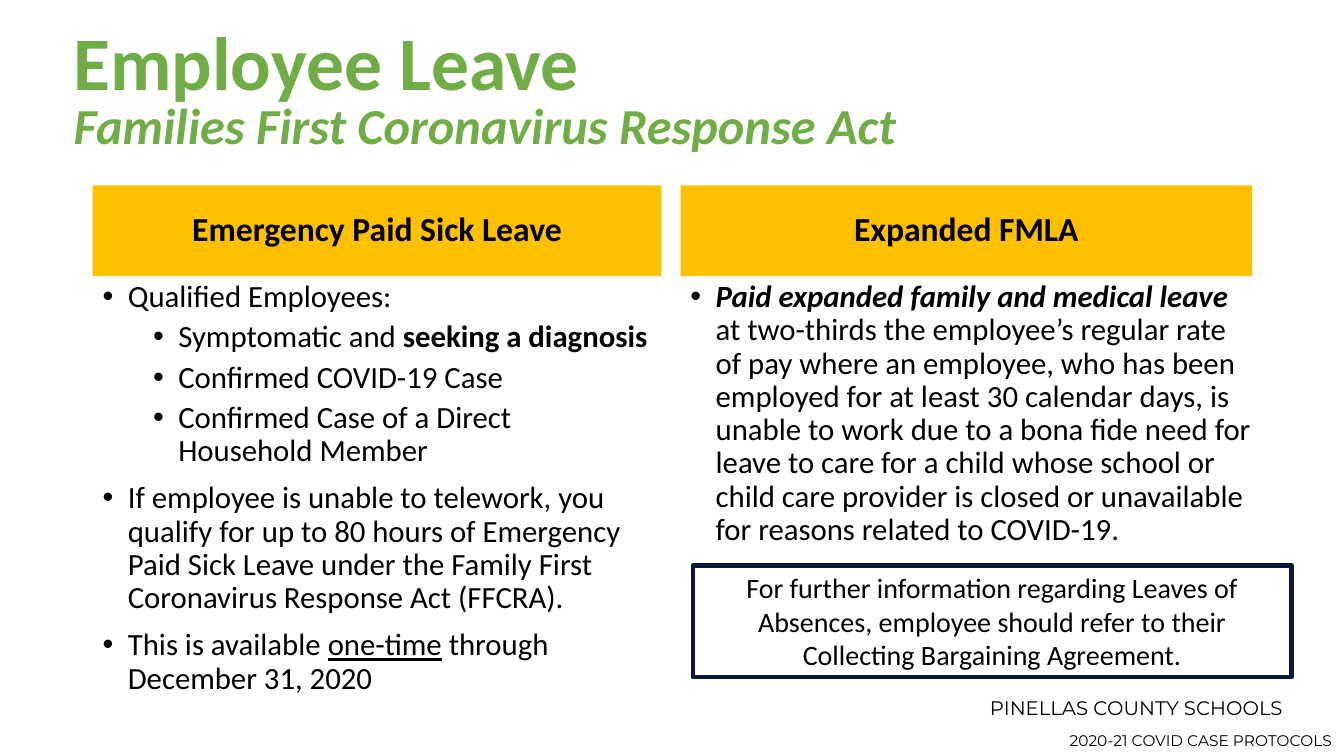
from lxml import etree
from pptx import Presentation
from pptx.dml.color import RGBColor
from pptx.enum.shapes import MSO_SHAPE
from pptx.enum.text import MSO_ANCHOR, MSO_AUTO_SIZE, PP_ALIGN
from pptx.oxml.ns import qn
from pptx.util import Inches, Pt

COLORS = {"gold": "FFC000", "green": "70AD47", "navy": "0B163C", "text": "000000"}

# Each bullet: (level, [(text, styles)]), styles being any of b, i, u
SICK_LEAVE = [
    (0, [("Qualified Employees:", "")]),
    (1, [("Symptomatic and ", ""), ("seeking a diagnosis", "b")]),
    (1, [("Confirmed COVID-19 Case", "")]),
    (1, [("Confirmed Case of a Direct Household Member", "")]),
    (0, [("If employee is unable to telework, you qualify for up to 80 hours of "
          "Emergency Paid Sick Leave under the Family First Coronavirus "
          "Response Act (FFCRA).", "")]),
    (0, [("This is available ", ""), ("one-time", "u"),
         (" through December 31, 2020", "")]),
]
FMLA = [
    (0, [("Paid expanded family and medical leave ", "bi"),
         ("at two-thirds the employee’s regular rate of pay where an employee, "
          "who has been employed for at least 30 calendar days, is unable to work "
          "due to a bona fide need for leave to care for a child whose school or "
          "child care provider is closed or unavailable for reasons related to "
          "COVID-19.", "")]),
]
CALLOUT = ("For further information regarding Leaves of Absences, employee should "
           "refer to their Collecting Bargaining Agreement.")


def rgb(name):
    return RGBColor.from_string(COLORS[name])


def style_run(r, size, styles="", color="text", font="Calibri"):
    r.font.name = font
    r.font.size = Pt(size)
    r.font.color.rgb = rgb(color)
    r.font.bold = "b" in styles
    r.font.italic = "i" in styles
    r.font.underline = "u" in styles


def add_box(slide, left, top, width, height):
    sp = slide.shapes.add_shape(MSO_SHAPE.RECTANGLE, Inches(left), Inches(top),
                                Inches(width), Inches(height))
    sp.shadow.inherit = False
    return sp


def add_text(slide, left, top, width, height):
    tb = slide.shapes.add_textbox(Inches(left), Inches(top),
                                  Inches(width), Inches(height))
    tb.text_frame.word_wrap = True
    return tb.text_frame


def set_bullet(p, level):
    p.level = level
    p.line_spacing = 0.9
    p.space_before = Pt(5 if level else 10)
    pPr = p._p.get_or_add_pPr()
    pPr.set("marL", str(Inches(0.25 + 0.5 * level)))
    pPr.set("indent", str(Inches(-0.25)))
    etree.SubElement(pPr, qn("a:buFont")).set("typeface", "Arial")
    etree.SubElement(pPr, qn("a:buChar")).set("char", "•")


def add_title(slide, left, top, width, height):
    title = slide.shapes.title
    title.left, title.top = Inches(left), Inches(top)
    title.width, title.height = Inches(width), Inches(height)
    tf = title.text_frame
    tf.text = "Employee Leave\vFamilies First Coronavirus Response Act"
    tf.auto_size = MSO_AUTO_SIZE.NONE
    tf.vertical_anchor = MSO_ANCHOR.MIDDLE
    p = tf.paragraphs[0]
    p.alignment = PP_ALIGN.LEFT
    p.line_spacing = 0.8
    heading, subheading = p.runs
    style_run(heading, 54, "b", "green")
    style_run(subheading, 36, "bi", "green")


def add_column(slide, left, top, width, body_width, heading, bullets):
    # Gold heading band
    band_height = 0.9
    sp = add_box(slide, left, top, width, band_height)
    sp.fill.solid()
    sp.fill.fore_color.rgb = rgb("gold")
    sp.line.fill.background()
    tf = sp.text_frame
    tf.text = heading
    tf.vertical_anchor = MSO_ANCHOR.MIDDLE
    p = tf.paragraphs[0]
    p.alignment = PP_ALIGN.CENTER
    p.line_spacing = 0.9
    style_run(p.runs[0], 24, "b")

    # Bulleted body
    tf = add_text(slide, left, top + band_height, body_width, 4.03)
    for n, (level, runs) in enumerate(bullets):
        p = tf.add_paragraph() if n else tf.paragraphs[0]
        set_bullet(p, level)
        for text, styles in runs:
            r = p.add_run()
            r.text = text
            style_run(r, 22, styles)


def add_callout(slide, left, top, width, height):
    sp = add_box(slide, left, top, width, height)
    sp.fill.background()
    sp.line.color.rgb = rgb("navy")
    sp.line.width = Pt(3)
    tf = sp.text_frame
    tf.text = CALLOUT
    tf.vertical_anchor = MSO_ANCHOR.TOP
    p = tf.paragraphs[0]
    p.alignment = PP_ALIGN.CENTER
    style_run(p.runs[0], 20)


def add_footer(slide, left, top, width, height, text, size):
    tf = add_text(slide, left, top, width, height)
    tf.text = text
    style_run(tf.paragraphs[0].runs[0], size, font="Montserrat")


def main():
    prs = Presentation()
    prs.slide_width, prs.slide_height = Inches(13.33), Inches(7.5)
    slide = prs.slides.add_slide(prs.slide_layouts[5])

    add_title(slide, 0.63, 0.2, 11.5, 1.45)
    add_column(slide, 0.92, 1.84, 5.64, 5.64, "Emergency Paid Sick Leave", SICK_LEAVE)
    add_column(slide, 6.75, 1.84, 5.67, 5.82, "Expanded FMLA", FMLA)
    add_callout(slide, 6.87, 5.61, 5.94, 1.11)
    add_footer(slide, 9.72, 6.86, 4.2, 0.34, "PINELLAS COUNTY SCHOOLS", 14)
    add_footer(slide, 10.51, 7.2, 4.2, 0.29, "2020-21 COVID CASE PROTOCOLS", 11)

    prs.save("out.pptx")


if __name__ == "__main__":
    main()
